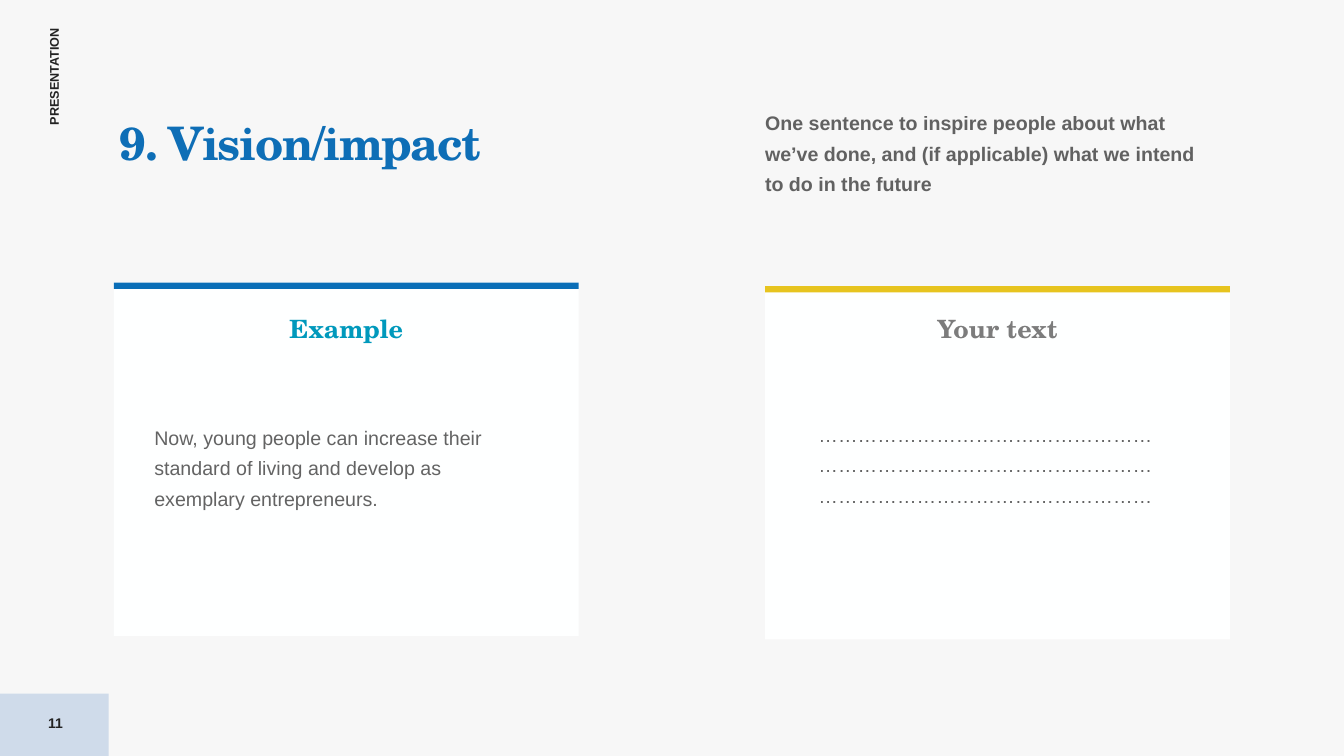
from pptx import Presentation
from pptx.dml.color import RGBColor
from pptx.enum.shapes import MSO_SHAPE as SHAPE
from pptx.enum.text import MSO_ANCHOR as ANCHOR, MSO_AUTO_SIZE as FIT, PP_ALIGN as ALIGN
from pptx.oxml.ns import qn
from pptx.util import Pt
from lxml import etree

SANS, SERIF = "Arial", "TeX Gyre Schola"
INK, PAPER, BLUE, YELLOW = "222222", "FEFFFF", "0A6EB7", "E7C41F"
BODY_INSETS = (0, 3, 17, 3)
CARD_W, CARD_H, BAR_H = 332, 252.5, 4.5


def rgb(value):
    return RGBColor.from_string(value)


def rect(s, x, y, w, h, color):
    sp = s.shapes.add_shape(SHAPE.RECTANGLE, Pt(x), Pt(y), Pt(w), Pt(h))
    sp.shadow.inherit = False
    sp.fill.solid()
    sp.fill.fore_color.rgb = rgb(color)
    sp.line.fill.background()
    return sp


def text(s, x, y, w, h, words, size, font=SANS, color=INK, bold=True, align=ALIGN.LEFT,
         anchor=ANCHOR.TOP, insets=(7.2, 3.6, 7.2, 3.6), spacing=None,
         wrap=True, fit=FIT.SHAPE_TO_FIT_TEXT, opacity=None, tracking=None):
    sp = s.shapes.add_textbox(Pt(x), Pt(y), Pt(w), Pt(h))
    tf = sp.text_frame
    frame = {"word_wrap": wrap, "auto_size": fit, "vertical_anchor": anchor}
    for side, inset in zip(("left", "top", "right", "bottom"), insets):
        frame[f"margin_{side}"] = Pt(inset)
    for name, value in frame.items():
        setattr(tf, name, value)
    p = tf.paragraphs[0]
    p.alignment = align
    p.line_spacing = spacing
    r = p.add_run()
    r.text = words
    for name, value in {"name": font, "size": Pt(size), "bold": bold}.items():
        setattr(r.font, name, value)
    r.font.color.rgb = rgb(color)
    props = r.font._element
    if opacity:
        fill = props.find(".//" + qn("a:srgbClr"))
        etree.SubElement(fill, qn("a:alpha"), val=str(opacity * 1000))
    if tracking:
        props.set("spc", str(tracking * 100))
    return sp


def body(s, x, y, w, h, words, **style):
    text(s, x, y, w, h, words, 14, insets=BODY_INSETS, spacing=1.3, opacity=70, **style)


def frame_marks(s, height):
    # Page number block and vertical label
    rect(s, 0, height - 44.6, 77.6, 44.6, "CFDBEA")
    label = text(s, -4.3, 44.6, 85.7, 18, "PRESENTATION", 9, wrap=False)
    label.rotation = 270
    text(s, 0, height - 38.2, 79.2, 28.8, "11", 10, align=ALIGN.CENTER,
         anchor=ANCHOR.MIDDLE, fit=FIT.NONE)


def header(s, x, y, intro_x):
    # Title on the left, guidance on the right
    text(s, x, y + 2.9, 323.3, 64, "9. Vision/impact", 33, font=SERIF, color="0E6EB6",
         insets=(0, 15.1, 0, 0), spacing=0.8, fit=FIT.NONE, tracking=-1)
    body(s, intro_x, y, CARD_W, 69.8, "One sentence to inspire people about what we’ve done, "
         "and (if applicable) what we intend to do in the future")


def card(s, x, y, accent, heading, heading_color, heading_y):
    # White panel with a coloured top bar and centred heading
    rect(s, x, y, CARD_W, CARD_H, PAPER)
    rect(s, x, y, CARD_W, BAR_H, accent)
    text(s, x + 41.8, heading_y, CARD_W - 83.6, 25.2, heading, 18, font=SERIF,
         color=heading_color, align=ALIGN.CENTER, anchor=ANCHOR.MIDDLE,
         insets=(0, 0, 0, 0), spacing=1.3)


def main():
    prs = Presentation()
    prs.slide_width, prs.slide_height = Pt(960), Pt(540)
    s = prs.slides.add_slide(prs.slide_layouts[6])
    s.background.fill.solid()
    s.background.fill.fore_color.rgb = rgb("F7F7F7")

    left, right, heading_y = 81.4, 546.5, 218.9
    frame_marks(s, 540)
    header(s, 85.7, 71.3, right)

    # Example card
    card(s, left, 201.8, BLUE, "Example", "0099BC", heading_y)
    body(s, left + 28.8, 295.9, 279.4, 69.8, "Now, young people can increase their standard "
         "of living and develop as exemplary entrepreneurs.", bold=False)

    # Card to fill in: three lines of 17 dot leaders
    card(s, right, 204.3, YELLOW, "Your text", "7C7C7C", heading_y)
    body(s, right + 35.3, 293.8, 261.4, 69.8, "…" * (3 * 17), bold=False, align=ALIGN.CENTER)

    prs.save("out.pptx")


if __name__ == "__main__":
    main()
